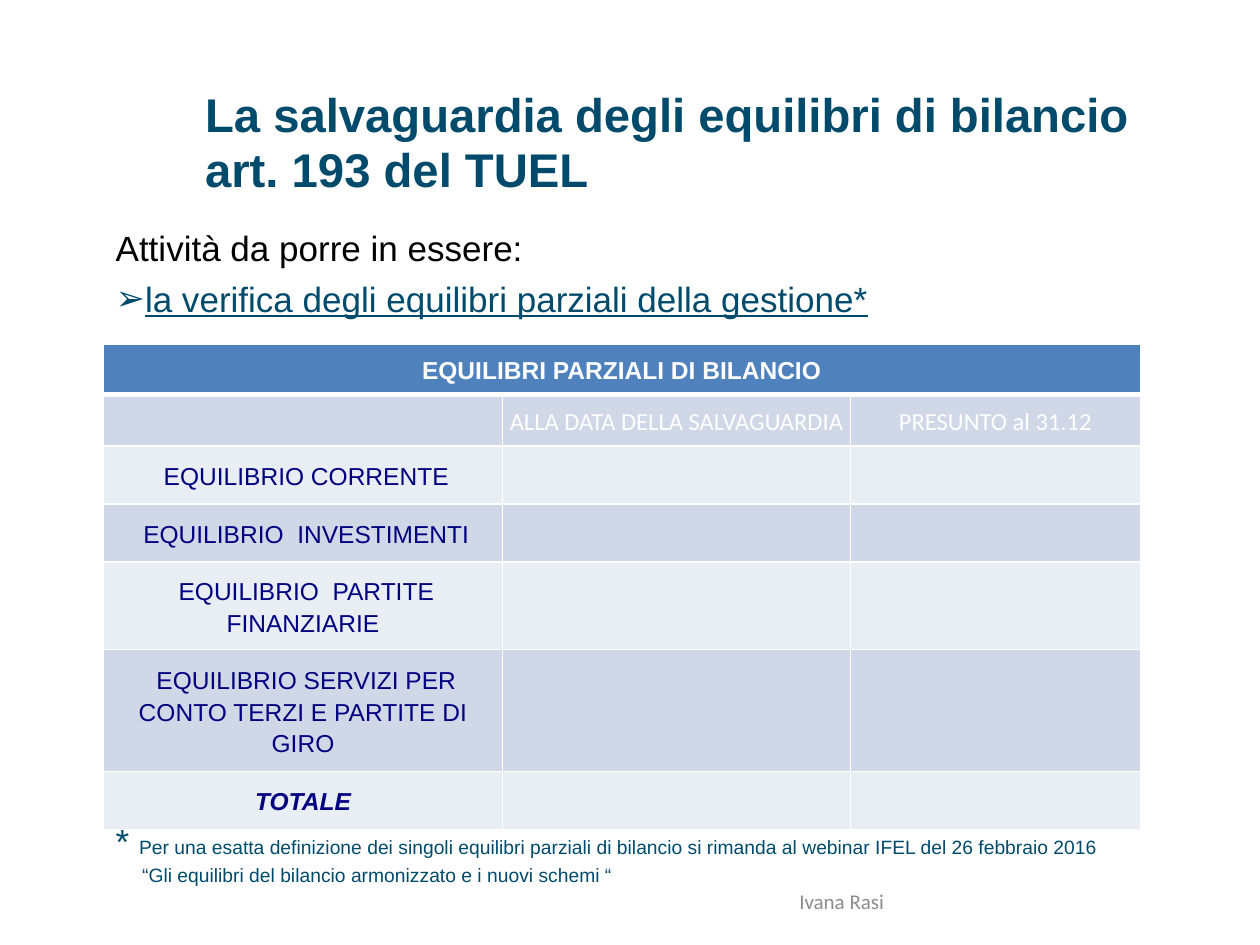
from dataclasses import dataclass

from lxml import etree
from pptx import Presentation
from pptx import util as u
from pptx.dml.color import RGBColor
from pptx.enum import text
from pptx.oxml.ns import qn

TEAL, NAVY, WHITE, GREY = "004B6B", "000080", "FFFFFF", "8C8C8C"
HEADER_BLUE, BAND_DARK, BAND_LIGHT = "4F81BD", "D0D8E8", "E9EDF4"
LEFT, CENTER = text.PP_ALIGN.LEFT, text.PP_ALIGN.CENTER
MIDDLE, TOP = text.MSO_ANCHOR.MIDDLE, text.MSO_ANCHOR.TOP


@dataclass
class BalanceRow:
    labels: tuple[str, ...]
    height: float
    fill: str
    color: str = NAVY
    font: str = "Arial"
    bold: bool = False
    italic: bool = False
    side: float = 0.03
    margin: float = 0.08


BALANCES = [
    BalanceRow(("EQUILIBRI PARZIALI DI BILANCIO",), 0.4, HEADER_BLUE, WHITE, bold=True, margin=0.04),
    BalanceRow(("", "ALLA DATA DELLA SALVAGUARDIA", "PRESUNTO al 31.12"), 0.41, BAND_DARK,
               WHITE, "Calibri", margin=0.04),
    BalanceRow((" EQUILIBRIO CORRENTE",), 0.42, BAND_LIGHT),
    BalanceRow((" EQUILIBRIO  INVESTIMENTI",), 0.42, BAND_DARK),
    BalanceRow((" EQUILIBRIO  PARTITE FINANZIARIE",), 0.67, BAND_LIGHT),
    BalanceRow((" EQUILIBRIO SERVIZI PER CONTO TERZI E PARTITE DI GIRO",), 0.92, BAND_DARK),
    BalanceRow(("TOTALE",), 0.42, BAND_LIGHT, bold=True, italic=True, side=0.02),
]
COLUMN_WIDTHS = (3.17, 2.76, 2.3)


def rgb(value: str) -> RGBColor:
    return RGBColor.from_string(value)


def write(paragraph, words: str, *, size: float, color: str = TEAL, font: str = "Arial",
          bold=False, italic=False, underline=False, align=LEFT, before: float = 0,
          spacing=None, bullet: str = "", indent: float = 0) -> None:
    properties = paragraph._p.get_or_add_pPr()
    if indent:
        properties.set("marL", str(u.Inches(indent)))
    if bullet:
        etree.SubElement(properties, qn("a:buFont"), typeface="Arial")
        etree.SubElement(properties, qn("a:buChar"), char=bullet)
    paragraph.alignment = align
    if before:
        paragraph.space_before = u.Pt(before)
    if spacing:
        paragraph.line_spacing = spacing
    for number, line in enumerate(words.split("\n")):
        if number:
            paragraph.add_line_break()
        run = paragraph.add_run()
        run.text = line
        run.font.size, run.font.name = u.Pt(size), font
        run.font.bold, run.font.italic, run.font.underline = bold, italic, underline
        run.font.color.rgb = rgb(color)


def add_frame(slide, left: float, top: float, width: float, height: float, anchor=TOP):
    box = slide.shapes.add_textbox(u.Inches(left), u.Inches(top), u.Inches(width), u.Inches(height))
    frame = box.text_frame
    frame.word_wrap = True
    frame.vertical_anchor = anchor
    return frame


def style_cell(cell, row: BalanceRow, bottom_width: float) -> None:
    properties = cell._tc.get_or_add_tcPr()
    for side in ("lnL", "lnR", "lnT", "lnB"):
        width = bottom_width if side == "lnB" else 1
        border = etree.SubElement(properties, qn(f"a:{side}"), w=str(u.Pt(width)))
        fill = etree.SubElement(border, qn("a:solidFill"))
        etree.SubElement(fill, qn("a:srgbClr"), val=WHITE)
    cell.fill.solid()
    cell.fill.fore_color.rgb = rgb(row.fill)
    cell.vertical_anchor = MIDDLE
    cell.margin_left = cell.margin_right = u.Inches(row.side)
    cell.margin_top = cell.margin_bottom = u.Inches(row.margin)


def add_balance_table(slide) -> None:
    table = slide.shapes.add_table(
        len(BALANCES), len(COLUMN_WIDTHS), u.Inches(0.82), u.Inches(2.73),
        u.Inches(sum(COLUMN_WIDTHS)), u.Inches(sum(row.height for row in BALANCES))).table
    for column, width in zip(table.columns, COLUMN_WIDTHS):
        column.width = u.Inches(width)
    for index, row in enumerate(BALANCES):
        table.rows[index].height = u.Inches(row.height)
        for cell in table.rows[index].cells:
            style_cell(cell, row, bottom_width=1 if index else 3)
        for position, label in enumerate(row.labels):
            if label:
                write(table.cell(index, position).text_frame.paragraphs[0], label, size=14,
                      color=row.color, font=row.font, bold=row.bold, italic=row.italic,
                      align=CENTER, spacing=1.15)
    table.cell(0, 0).merge(table.cell(0, len(COLUMN_WIDTHS) - 1))


def main() -> None:
    deck = Presentation()
    deck.slide_width, deck.slide_height = u.Inches(10), u.Inches(7.5)
    slide = deck.slides.add_slide(deck.slide_layouts[6])

    title = add_frame(slide, 1.53, 0.65, 7.84, 0.96, MIDDLE)
    write(title.paragraphs[0], "La salvaguardia degli equilibri di bilancio\nart. 193 del TUEL",
          size=27, bold=True, spacing=u.Pt(31))

    body = add_frame(slide, 0.82, 1.75, 8.54, 5.6)
    write(body.paragraphs[0], "Attività da porre in essere:", size=20, color="000000")
    write(body.add_paragraph(), "la verifica degli equilibri parziali della gestione*",
          size=20, underline=True, before=5, bullet="➢")
    footnote = body.add_paragraph()
    write(footnote, "* ", size=20, before=286)
    write(footnote, "Per una esatta definizione dei singoli equilibri parziali di bilancio "
          "si rimanda al webinar IFEL del 26 febbraio 2016", size=11)
    write(body.add_paragraph(), "“Gli equilibri del bilancio armonizzato e i nuovi schemi “",
          size=11, before=1, indent=0.21)

    add_balance_table(slide)

    footer = add_frame(slide, 5.94, 6.95, 1.48, 0.4, MIDDLE)
    write(footer.paragraphs[0], "Ivana Rasi", size=12, color=GREY, font="Calibri", align=CENTER)

    deck.save("out.pptx")


if __name__ == "__main__":
    main()
